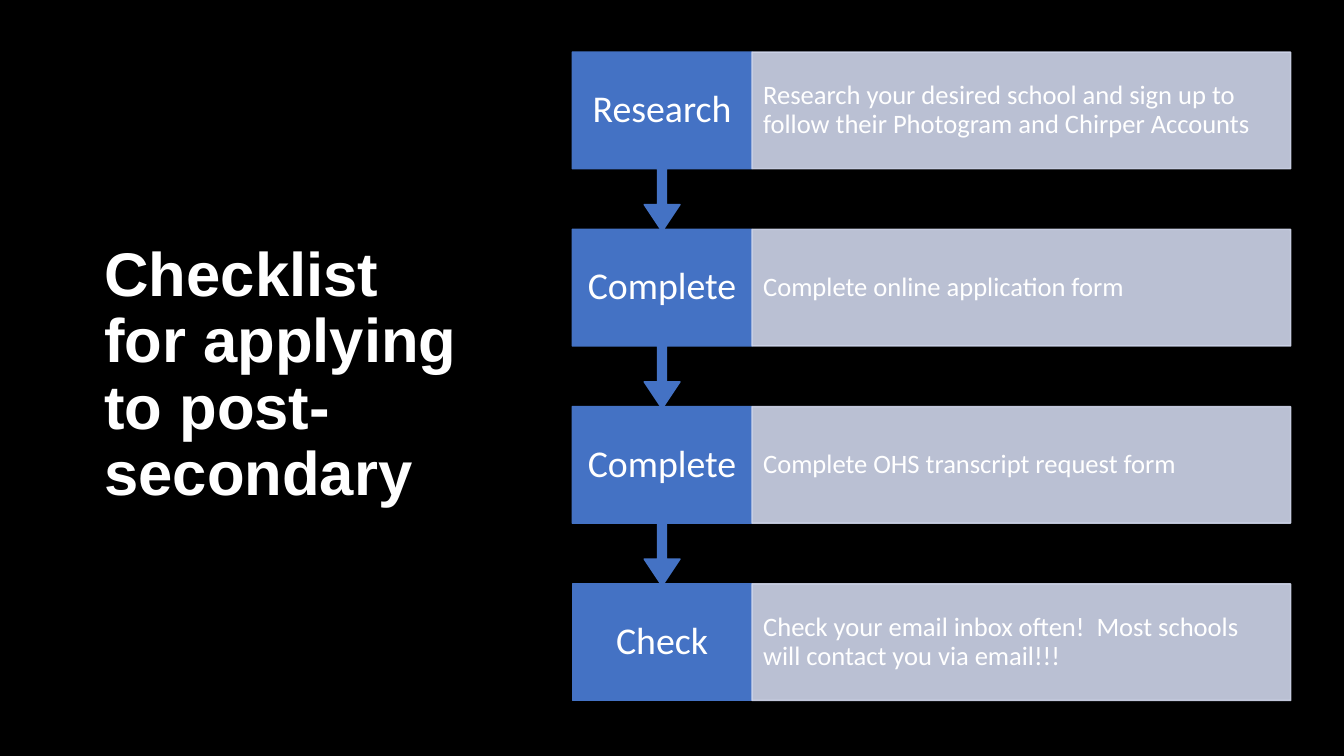
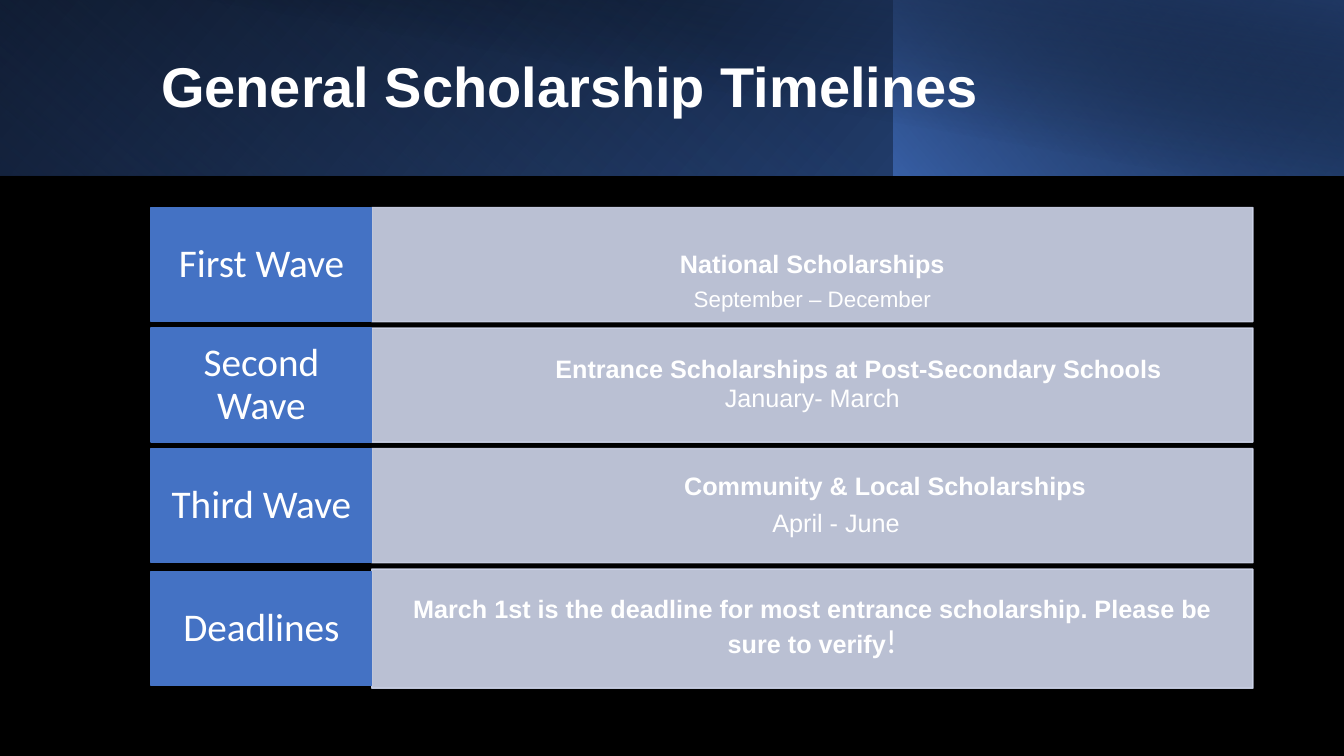
import pptx
import pptx.util
import pptx.dml.color
import pptx.enum.shapes
import pptx.enum.text
import pptx.oxml.ns
import lxml.etree

Pt = pptx.util.Pt
MSO = pptx.enum.shapes.MSO_SHAPE
ALIGN = pptx.enum.text.PP_ALIGN
qn = pptx.oxml.ns.qn

# Shared style
BLACK, WHITE, BLUE, PALE = "000000", "FFFFFF", "4472C4", "CFD5EA"
HEAD_FONT, BODY_FONT = "Arial", "Calibri"
PALE_ALPHA = 90

# Content: checklist steps as (label, detail)
STEPS = [
    ("Research", "Research your desired school and sign up to follow "
                 "their Photogram and Chirper Accounts"),
    ("Complete", "Complete online application form"),
    ("Complete", "Complete OHS transcript request form"),
    ("Check", "Check your email inbox often!  Most schools will contact you via email!!!"),
]

# Content: timeline rows; each paragraph is a list of (text, format) runs
BOLD = dict(size=18, font=HEAD_FONT, bold=True)
PLAIN = dict(size=18, font=HEAD_FONT)
WAVES = [
    dict(label="First Wave", gap=7, insets=(12, 27, 12, 2), lines=[
        dict(runs=[("National Scholarships", BOLD)]),
        dict(runs=[("September – December", dict(size=16, font=HEAD_FONT))])]),
    dict(label="Second Wave", gap=1, lines=[
        dict(runs=[("Entrance Scholarships at Post-Secondary Schools", BOLD)], indent=66),
        dict(runs=[("January- March", PLAIN)])]),
    dict(label="Third Wave", gap=7, lines=[
        dict(runs=[("Community & Local Scholarships", BOLD)], indent=104),
        dict(runs=[("April - June", PLAIN)], indent=34)]),
    dict(label="Deadlines", height=85, lines=[
        dict(runs=[("March 1st is the deadline for most entrance scholarship. "
                    "Please be sure to verify", BOLD),
                   ("!", dict(size=24, font=BODY_FONT))])]),
]

# Banner layers: left, width, height, angle, rotation, flipped, (position, colour, alpha) stops
BANNER = [
    (0, 960, 125.3, 140, 0, True, [(0, BLACK, 100), (100, "2F5597", 100)]),
    (0, 639.5, 125.3, 230, 180, True, [(20, BLUE, 0), (100, "203864", 55)]),
    (638.5, 321.5, 125.3, 220, 0, True, [(0, BLUE, 66), (100, BLACK, 30)]),
    (36, 924, 126, 280, 0, False, [(50, BLACK, 0), (99, "203864", 52)]),
]


def rgb(color):
    return pptx.dml.color.RGBColor.from_string(color)


def set_alpha(clr, alpha):
    lxml.etree.SubElement(clr, qn("a:alpha")).set("val", str(alpha * 1000))


def add_box(slide, kind, left, top, width, height, color=None, alpha=100):
    sp = slide.shapes.add_shape(kind, Pt(left), Pt(top), Pt(width), Pt(height))
    sp.shadow.inherit = False
    if color is None:
        sp.line.fill.background()
        return sp
    for fill in (sp.fill, sp.line.fill):
        fill.solid()
        fill.fore_color.rgb = rgb(color)
    sp.line.width = Pt(1)
    if alpha < 100:
        for clr in sp.element.spPr.iter(qn("a:srgbClr")):
            set_alpha(clr, alpha)
    return sp


def set_gradient(sp, angle, stops):
    sp.fill.gradient()
    grad = sp.element.spPr.find(qn("a:gradFill"))
    grad.find(qn("a:lin")).set("ang", str(angle * 60000))
    stop_list = grad.find(qn("a:gsLst"))
    for old in list(stop_list):
        stop_list.remove(old)
    for position, color, alpha in stops:
        gs = lxml.etree.SubElement(stop_list, qn("a:gs"))
        gs.set("pos", str(position * 1000))
        clr = lxml.etree.SubElement(gs, qn("a:srgbClr"))
        clr.set("val", color)
        if alpha < 100:
            set_alpha(clr, alpha)


def put_text(sp, text, size=18, font=BODY_FONT, bold=False, align=ALIGN.LEFT,
             insets=(7.2, 3.6, 7.2, 3.6), gap=0):
    """Fill a shape with a string, or with paragraphs made of formatted runs."""
    if isinstance(text, str):
        text = [dict(runs=[(text, dict(size=size, font=font, bold=bold))])]
    tf = sp.text_frame
    tf.word_wrap = True
    tf.vertical_anchor = pptx.enum.text.MSO_ANCHOR.MIDDLE
    tf.margin_left, tf.margin_top, tf.margin_right, tf.margin_bottom = map(Pt, insets)
    for i, line in enumerate(text):
        p = tf.add_paragraph() if i else tf.paragraphs[0]
        p.alignment = align
        p.line_spacing = 0.9
        if i < len(text) - 1:
            p.space_after = Pt(gap)
        if "indent" in line:
            p._p.get_or_add_pPr().set("marL", str(Pt(line["indent"])))
        for words, style in line["runs"]:
            r = p.add_run()
            r.text = words
            r.font.size = Pt(style["size"])
            r.font.name = style["font"]
            r.font.bold = style.get("bold", False)
            r.font.color.rgb = rgb(WHITE)


def add_slide(prs):
    s = prs.slides.add_slide(prs.slide_layouts[6])
    s.background.fill.solid()
    s.background.fill.fore_color.rgb = rgb(BLACK)
    return s


def add_title(slide, text, left, top, width, height, size):
    sp = slide.shapes.add_textbox(Pt(left), Pt(top), Pt(width), Pt(height))
    put_text(sp, text, size=size, font=HEAD_FONT, bold=True)


def build_checklist(prs):
    s = add_slide(prs)
    add_title(s, "Checklist for applying to post-secondary", 67.5, 80, 269.5, 377, 44)
    left, top, pitch = 408.75, 37.25, 126.6
    label_w, detail_w, box_h, callout_h = 128.4, 384.8, 83.25, 128.1
    # Bottom row first, so that each arrow lies over the box below it
    for i in reversed(range(len(STEPS))):
        label, detail = STEPS[i]
        y = top + i * pitch
        if i == len(STEPS) - 1:
            sp = add_box(s, MSO.RECTANGLE, left, y, label_w, box_h, BLUE)
        else:
            sp = add_box(s, MSO.DOWN_ARROW_CALLOUT, left, y, label_w, callout_h, BLUE)
            for n, value in enumerate((0.05, 0.1, 0.15, 0.65)):
                sp.adjustments[n] = value
        put_text(sp, label, size=27, align=ALIGN.CENTER, insets=(6, 6, 6, 6))
        sp = add_box(s, MSO.RECTANGLE, left + label_w, y, detail_w, box_h, PALE, PALE_ALPHA)
        put_text(sp, detail, size=19, insets=(8, 6, 8, 6))


def build_timelines(prs):
    s = add_slide(prs)
    # Banner
    for left, width, height, angle, rotation, flipped, stops in BANNER:
        sp = add_box(s, MSO.RECTANGLE, left, 0, width, height)
        sp.rotation = rotation
        if flipped:
            sp.element.spPr.find(qn("a:xfrm")).set("flipH", "1")
        set_gradient(sp, angle, stops)
    add_title(s, "General Scholarship Timelines", 108, 23, 779, 81.5, 40)
    # Rows: each label is centred on the height of its detail box
    left, top, pitch, label_w, detail_w, label_h = 108, 148.25, 86.1, 157.5, 629.5, 81.5
    for i, wave in enumerate(WAVES):
        y = top + i * pitch
        height = wave.get("height", label_h)
        sp = add_box(s, MSO.RECTANGLE, left + label_w, y, detail_w, height, PALE, PALE_ALPHA)
        put_text(sp, wave["lines"], align=ALIGN.CENTER, gap=wave.get("gap", 0),
                 insets=wave.get("insets", (12, 6, 12, 6)))
        sp = add_box(s, MSO.RECTANGLE, left, y + (height - label_h) / 2,
                     label_w, label_h, BLUE)
        put_text(sp, wave["label"], size=28, align=ALIGN.CENTER, insets=(8.5, 8, 8.5, 8))


def main():
    prs = pptx.Presentation()
    prs.slide_width, prs.slide_height = Pt(960), Pt(540)
    build_checklist(prs)
    build_timelines(prs)
    prs.save("out.pptx")


if __name__ == "__main__":
    main()
